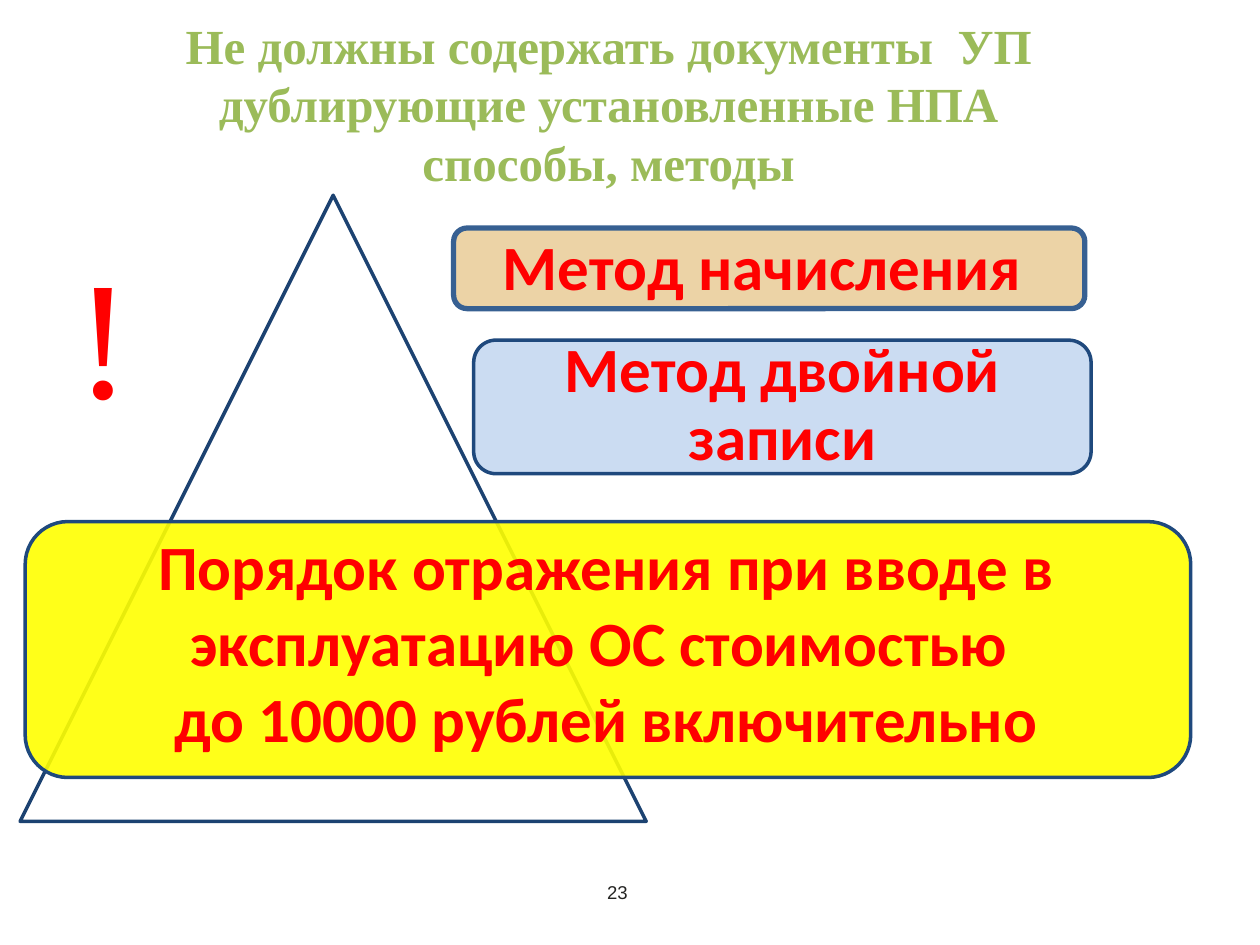
from lxml import etree
from pptx import Presentation
from pptx.dml.color import RGBColor
from pptx.enum.shapes import MSO_SHAPE
from pptx.enum.text import MSO_ANCHOR, PP_ALIGN
from pptx.oxml.ns import qn
from pptx.util import Pt

TRIANGLE = MSO_SHAPE.ISOSCELES_TRIANGLE
ROUNDED = MSO_SHAPE.ROUNDED_RECTANGLE
TOP, MIDDLE = MSO_ANCHOR.TOP, MSO_ANCHOR.MIDDLE
LEFT, CENTER = PP_ALIGN.LEFT, PP_ALIGN.CENTER
RED = "FF0000"


def color(value):
    return RGBColor.from_string(value)


def add_text(text, place, size=36, font="Calibri", fill=RED, bold=False,
             align=CENTER, anchor=TOP, inset=(7.2, 3.6), spacing=None):
    box = slide.shapes.add_textbox(*map(Pt, place))
    frame = box.text_frame
    frame.word_wrap = True
    frame.vertical_anchor = anchor
    frame.margin_left = frame.margin_right = Pt(inset[0])
    frame.margin_top = frame.margin_bottom = Pt(inset[1])
    frame.text = text
    for para in frame.paragraphs:
        para.alignment = align
        para.line_spacing = spacing
        for span in para.runs:
            span.font.size = Pt(size)
            span.font.name = font
            span.font.bold = bold
            span.font.color.rgb = color(fill)


deck = Presentation()
deck.slide_width, deck.slide_height = Pt(720), Pt(540)
slide = deck.slides.add_slide(deck.slide_layouts[6])

outlines = [
    (TRIANGLE, (11.5, 111.6, 357.8, 357.8), "FFFFFF", 100, "1C4271", 2),
    (ROUNDED, (259.2, 130.3, 360.7, 46.1), "EBCF9D", 90, "376092", 3),
    (ROUNDED, (270.7, 194.4, 352.8, 76.3), "C6D9F1", 90, "1F497D", 2),
    (ROUNDED, (14.4, 298.1, 666, 146.2), "FFFF00", 90, "1F497D", 2),
]
for kind, place, fill, opacity, line, width in outlines:
    shape = slide.shapes.add_shape(kind, *map(Pt, place))
    shape.shadow.inherit = False
    shape.fill.solid()
    shape.fill.fore_color.rgb = color(fill)
    shape.line.color.rgb = color(line)
    shape.line.width = Pt(width)
    if opacity < 100:
        tint = shape.fill._xPr.find(qn("a:solidFill"))[0]
        etree.SubElement(tint, qn("a:alpha"), val=str(opacity * 1000))

methods = [
    ("Метод начисления ", (261.4, 133.2, 356.4, 41.8)),
    ("Метод двойной записи", (274.3, 198, 345.6, 68.4)),
]
for method, place in methods:
    add_text(method, place, bold=True, anchor=MIDDLE, inset=(10.8, 10.8), spacing=0.9)

add_text("Не должны содержать документы  УП дублирующие установленные НПА\vспособы, методы",
         (36, 8.6, 623.5, 101.5), size=28, font="Times New Roman", fill="9BBB59",
         bold=True, inset=(0, 0))
add_text("Порядок отражения при вводе в эксплуатацию ОС стоимостью \n"
         "до 10000 рублей включительно", (20.2, 298.1, 652.3, 138.2), bold=True)
add_text("!", (36, 128.2, 72.7, 123.8), size=96, font="Times New Roman", align=LEFT)
add_text("23", (347, 504.7, 30, 12.2), size=10.6, font="Arial", fill="252523",
         align=LEFT, inset=(0, 0), spacing=Pt(11.6))

deck.save("out.pptx")
